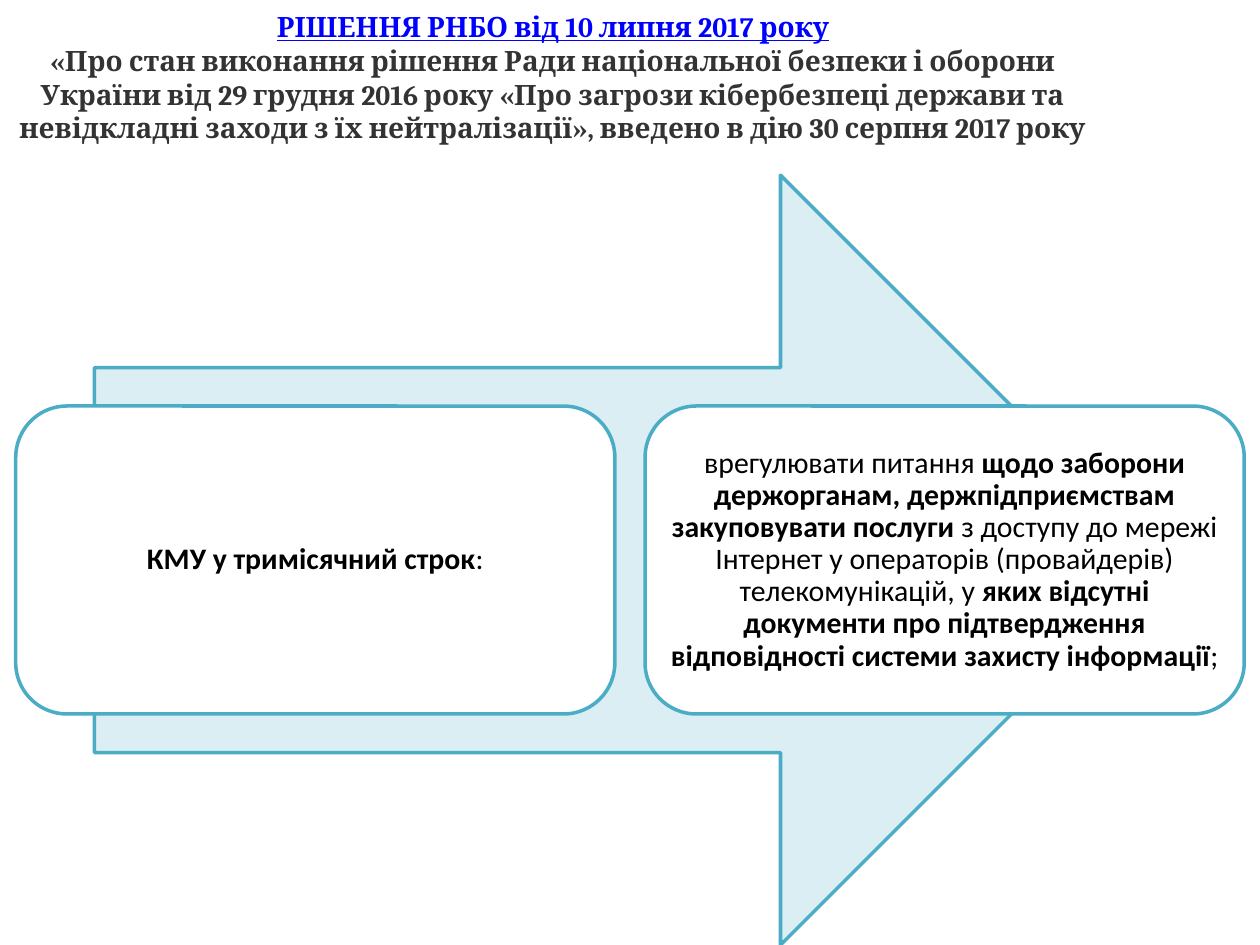
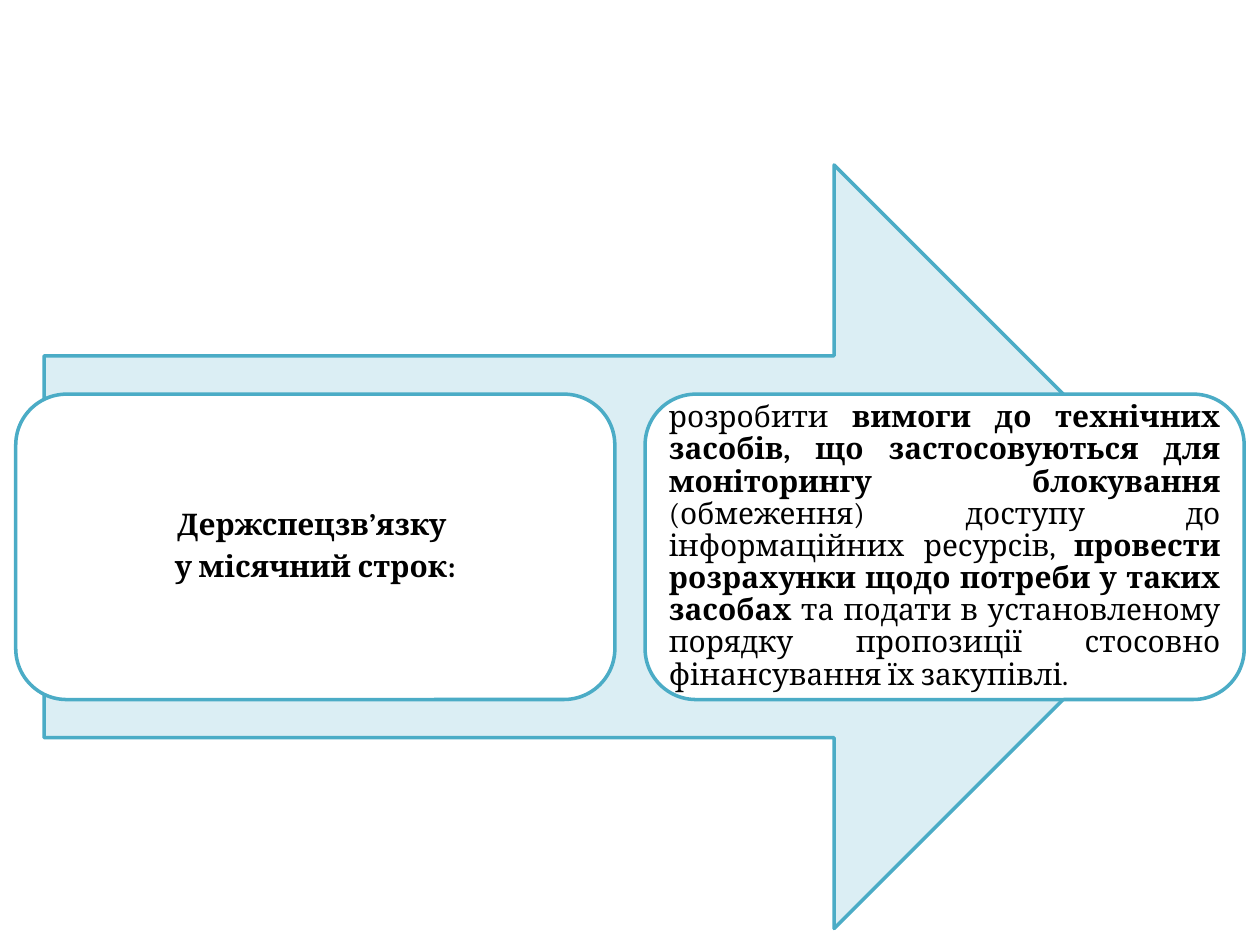
from dataclasses import dataclass

from pptx import Presentation
from pptx.dml.color import RGBColor as RGB
from pptx.enum.shapes import MSO_SHAPE as SHAPE
from pptx.enum.text import MSO_ANCHOR as ANCHOR, PP_ALIGN as ALIGN
from pptx.util import Inches, Pt


@dataclass(frozen=True)
class Theme:
    pale: RGB = RGB.from_string("DBEEF4")
    teal: RGB = RGB.from_string("4BACC6")
    white: RGB = RGB.from_string("FFFFFF")
    black: RGB = RGB.from_string("000000")
    grey: RGB = RGB.from_string("333333")
    blue: RGB = RGB.from_string("0000FF")
    sans: str = "Calibri"
    serif: str = "Cambria"
    head: int = 16
    body: int = 17
    line: int = 2


@dataclass(frozen=True)
class Box:
    left: float
    top: float
    width: float
    height: float

    def emu(self):
        return [Inches(v) for v in (self.left, self.top, self.width, self.height)]


LOOK = Theme()
WIDE, HIGH = 10, 7.5
EDGE = 0.0125 * WIDE   # slide edge to card
GAP = 0.024 * WIDE     # between the two cards
SHARE = 0.4            # card height within the arrow


def write(para, runs, face, size, color):
    """Fill a paragraph with (text, bold) runs."""
    for text, bold in runs:
        run = para.add_run()
        run.text = text
        font = run.font
        font.name, font.size, font.bold = face, Pt(size), bold
        font.color.rgb = color


def add_form(slide, kind, box, fill):
    form = slide.shapes.add_shape(kind, *box.emu())
    form.shadow.inherit = False
    form.fill.solid()
    form.fill.fore_color.rgb = fill
    form.line.color.rgb = LOOK.teal
    form.line.width = Pt(LOOK.line)
    return form


def add_card(slide, box, paras, face, align):
    frame = add_form(slide, SHAPE.ROUNDED_RECTANGLE, box, LOOK.white).text_frame
    frame.word_wrap = True
    frame.vertical_anchor = ANCHOR.MIDDLE
    frame.margin_left = frame.margin_right = Inches(0.07)
    frame.margin_top = frame.margin_bottom = Inches(0.07)
    for i, runs in enumerate(paras):
        para = frame.add_paragraph() if i else frame.paragraphs[0]
        para.alignment = align
        para.line_spacing = 0.9
        para.space_after = Pt(6 if i < len(paras) - 1 else 0)
        write(para, runs, face, LOOK.body, LOOK.black)


def add_flow(slide, box, who, task, face, align):
    """Big arrow in the box, with two cards across its middle."""
    add_form(slide, SHAPE.RIGHT_ARROW, box, LOOK.pale)
    width = (WIDE - 2 * EDGE - GAP) / 2
    height = SHARE * box.height
    top = box.top + (box.height - height) / 2
    for col, (paras, side) in enumerate([(who, ALIGN.CENTER), (task, align)]):
        left = EDGE + col * (width + GAP)
        add_card(slide, Box(left, top, width, height), paras, face, side)


def add_title(slide, box, lead, rest):
    frame = slide.shapes.add_textbox(*box.emu()).text_frame
    frame.word_wrap = True
    first, second = frame.paragraphs[0], frame.add_paragraph()
    for para, text, color in [(first, lead, LOOK.blue), (second, rest, LOOK.grey)]:
        para.alignment = ALIGN.CENTER
        write(para, [(text, True)], LOOK.serif, LOOK.head, color)
    first.runs[0].font.underline = True


def cabinet(slide):
    who = [[("КМУ у тримісячний строк", True), (":", False)]]
    task = [[
        ("врегулювати питання ", False),
        ("щодо заборони держорганам, держпідприємствам закуповувати послуги ", True),
        ("з доступу до мережі Інтернет у операторів (провайдерів) "
         "телекомунікацій, у ", False),
        ("яких відсутні документи про підтвердження відповідності системи "
         "захисту інформації", True),
        ("; ", False),
    ]]
    box = Box(0.075 * WIDE, 1.39, 0.85 * WIDE, 6.11)
    add_flow(slide, box, who, task, LOOK.sans, ALIGN.CENTER)
    add_title(
        slide, Box(0, 0.03, 8.78, 1.21),
        "РІШЕННЯ РНБО від 10 липня 2017 року",
        "«Про стан виконання рішення Ради національної безпеки і оборони "
        "України від 29 грудня 2016 року «Про загрози кібербезпеці держави та "
        "невідкладні заходи з їх нейтралізації», введено в дію 30 серпня 2017 року")


def service(slide):
    who = [[("Держспецзв’язку ", True)], [("у місячний строк:", True)]]
    task = [[
        ("розробити ", False),
        ("вимоги до технічних засобів, що застосовуються для моніторингу "
         "блокування ", True),
        ("(обмеження) доступу до інформаційних ресурсів, ", False),
        ("провести розрахунки щодо потреби у таких засобах", True),
        (" та подати в установленому порядку пропозиції стосовно "
         "фінансування їх закупівлі.", False),
    ]]
    box = Box(0.035 * WIDE, 1.31, 0.93 * WIDE, 6.06)
    add_flow(slide, box, who, task, LOOK.serif, ALIGN.JUSTIFY)


def main():
    deck = Presentation()
    deck.slide_width, deck.slide_height = Inches(WIDE), Inches(HIGH)
    for build in (cabinet, service):
        build(deck.slides.add_slide(deck.slide_layouts[6]))
    deck.save("out.pptx")


if __name__ == "__main__":
    main()
